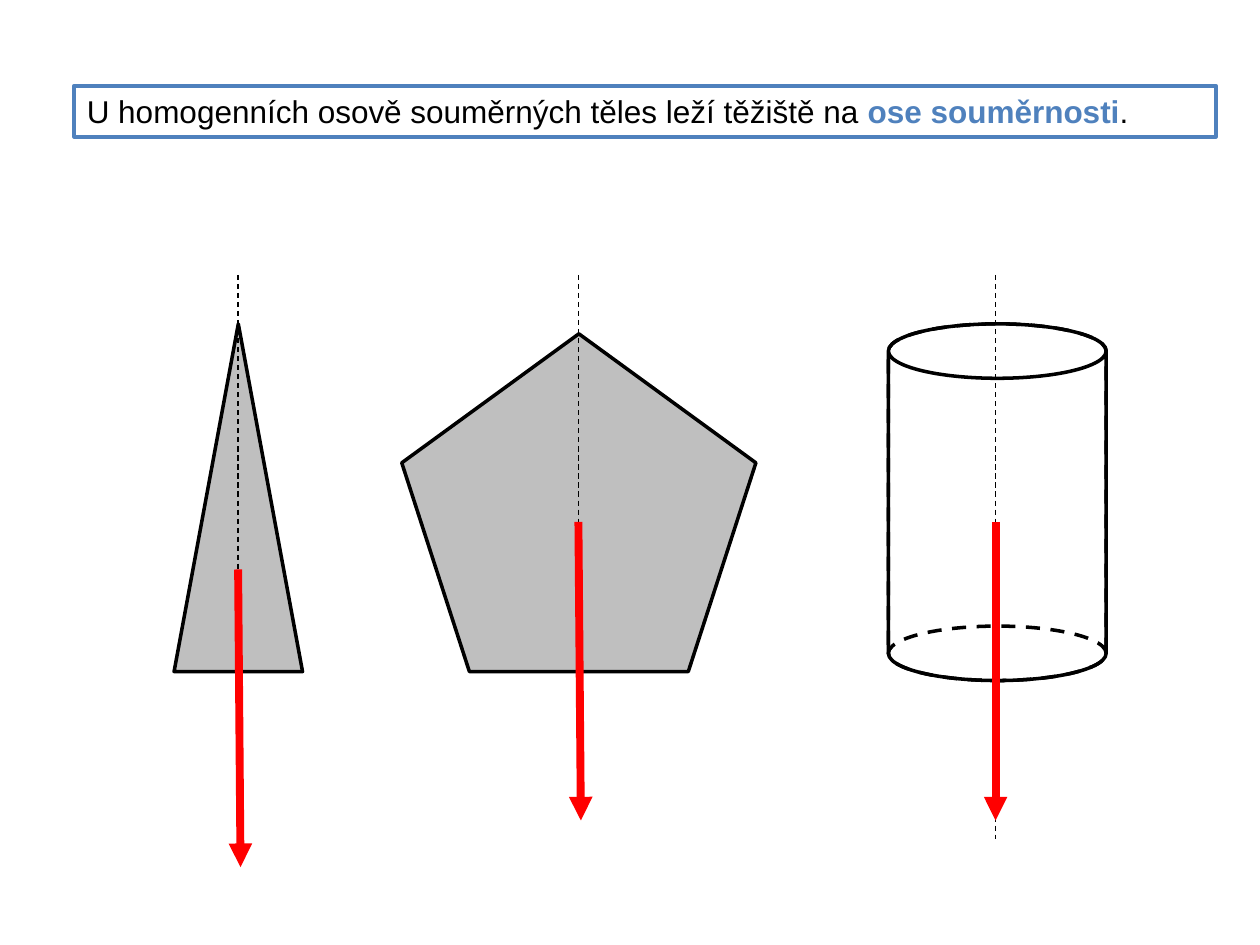
import pptx
import pptx.dml.color
import pptx.enum.dml
import pptx.enum.shapes
import pptx.enum.text
import pptx.oxml.ns
import pptx.util
from lxml import etree

Cm = pptx.util.Cm
Pt = pptx.util.Pt
SHAPE = pptx.enum.shapes.MSO_SHAPE
qn = pptx.oxml.ns.qn

BLACK, GRAY, BLUE, RED = "000000", "BFBFBF", "4F81BD", "FF0000"


def color(hex_string):
    return pptx.dml.color.RGBColor.from_string(hex_string)


class Board:
    """Holds the style and the current slide."""

    font_name = "Arial"
    font_size = 18
    outline_width = 2

    def __init__(self, slide):
        self.slide = slide

    def set_line(self, item, line_color, width, dashed=False):
        item.line.color.rgb = color(line_color)
        item.line.width = Pt(width)
        if dashed:
            item.line.dash_style = pptx.enum.dml.MSO_LINE.DASH

    def statement(self, left, top, width, height, parts):
        box = self.slide.shapes.add_textbox(Cm(left), Cm(top), Cm(width), Cm(height))
        self.set_line(box, BLUE, 2.25)
        frame = box.text_frame
        frame.word_wrap = True
        frame.auto_size = pptx.enum.text.MSO_AUTO_SIZE.SHAPE_TO_FIT_TEXT
        paragraph = frame.paragraphs[0]
        paragraph.font.name = self.font_name
        paragraph.font.size = Pt(self.font_size)
        for text, text_color, bold in parts:
            run = paragraph.add_run()
            run.text = text
            run.font.color.rgb = color(text_color)
            run.font.bold = bold

    def body(self, kind, left, top, width, height, fill=None, dashed=False, flipped=False):
        shape = self.slide.shapes.add_shape(kind, Cm(left), Cm(top), Cm(width), Cm(height))
        shape.shadow.inherit = False
        if fill:
            shape.fill.solid()
            shape.fill.fore_color.rgb = color(fill)
        else:
            shape.fill.background()
        self.set_line(shape, BLACK, self.outline_width, dashed)
        if flipped:
            shape.element.spPr.find(qn("a:xfrm")).set("flipV", "1")

    def straight(self, start, end, line_color, width, dashed=False):
        connector = self.slide.shapes.add_connector(
            pptx.enum.shapes.MSO_CONNECTOR.STRAIGHT, *map(Cm, start + end))
        self.set_line(connector, line_color, width, dashed)
        etree.SubElement(connector.element.spPr, qn("a:effectLst"))
        return connector

    def axis(self, x, top, bottom):
        self.straight((x, top), (x, bottom), BLACK, 0.75, dashed=True)

    def force(self, start, end):
        connector = self.straight(start, end, RED, 4.5)
        line = connector.element.spPr.find(qn("a:ln"))
        etree.SubElement(line, qn("a:tailEnd"), type="triangle")


def main():
    presentation = pptx.Presentation()
    presentation.slide_width, presentation.slide_height = Cm(25.4), Cm(19.05)
    board = Board(presentation.slides.add_slide(presentation.slide_layouts[6]))

    # Statement
    board.statement(1.5, 1.73, 23.01, 1.03, [
        ("U homogenních osově souměrných těles leží těžiště na ", BLACK, False),
        ("ose souměrnosti", BLUE, True),
        (".", BLACK, False),
    ])

    # Symmetric bodies; the dashed can shows the hidden edge of the cylinder
    board.body(SHAPE.ISOSCELES_TRIANGLE, 3.51, 6.53, 2.59, 7.01, GRAY)
    board.body(SHAPE.REGULAR_PENTAGON, 8.1, 6.73, 7.14, 6.81, GRAY)
    for hidden in (False, True):
        board.body(SHAPE.CAN, 17.91, 6.53, 4.39, 7.19, dashed=hidden, flipped=hidden)

    # Axes of symmetry
    triangle_x, pentagon_x, cylinder_x = 4.8, 11.66, 20.07
    for x, bottom in ((triangle_x, 15.52), (pentagon_x, 15.52), (cylinder_x, 16.92)):
        board.axis(x, 5.54, bottom)

    # Gravity forces acting from the centres of mass
    for x, top, bottom, drift in ((pentagon_x, 10.52, 16.54, 0.05),
                                  (triangle_x, 11.48, 17.48, 0.05),
                                  (cylinder_x, 10.52, 16.54, 0)):
        board.force((x, top), (x + drift, bottom))

    presentation.save("out.pptx")


if __name__ == "__main__":
    main()
